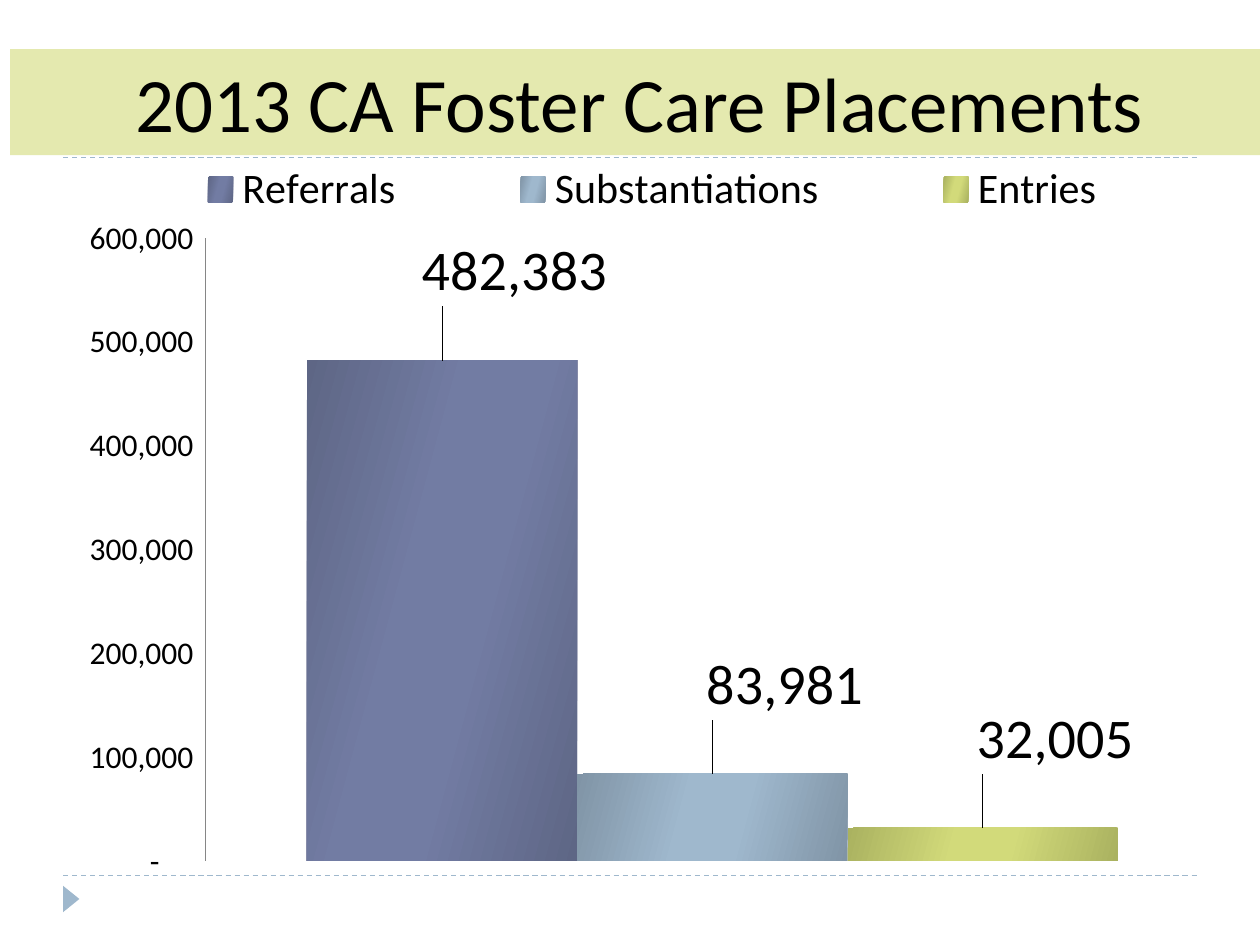
from lxml import etree
from pptx import Presentation
from pptx.chart.data import CategoryChartData
from pptx.dml.color import RGBColor
from pptx.enum.chart import XL_CHART_TYPE, XL_LABEL_POSITION, XL_LEGEND_POSITION, XL_TICK_MARK
from pptx.enum.dml import MSO_LINE
from pptx.enum.shapes import MSO_CONNECTOR, MSO_SHAPE
from pptx.enum.text import MSO_ANCHOR, MSO_AUTO_SIZE, PP_ALIGN
from pptx.oxml import parse_xml
from pptx.oxml.ns import nsdecls, qn
from pptx.util import Inches, Pt

COLUMNS = XL_CHART_TYPE.COLUMN_CLUSTERED
OUTSIDE_END = XL_LABEL_POSITION.OUTSIDE_END
LEGEND_TOP = XL_LEGEND_POSITION.TOP
NO_TICK = XL_TICK_MARK.NONE
DASH = MSO_LINE.DASH
STRAIGHT = MSO_CONNECTOR.STRAIGHT
TRIANGLE = MSO_SHAPE.ISOSCELES_TRIANGLE
MIDDLE = MSO_ANCHOR.MIDDLE
GROW = MSO_AUTO_SIZE.SHAPE_TO_FIT_TEXT
CENTER = PP_ALIGN.CENTER

FONT = "Calibri"
COLORS = {"text": "000000", "band": "E4E9AF", "accent": "9FB8CD", "axis": "868686"}
# name, value, colour in the middle of the bar, colour at its edges
SERIES = [
    ("Referrals", 482383, "727CA3", "5E6685"),
    ("Substantiations", 83981, "9FB8CD", "8094A6"),
    ("Entries", 32005, "D2DA7A", "AAB260"),
]
ACCOUNTING = '_(* #,##0_);_(* \\(#,##0\\);_(* "-"??_);_('
WIDTH, HEIGHT = 10, 7.5
MARGIN = 0.5
LABEL_SHIFT = 0.06


def rgb(name):
    return RGBColor.from_string(COLORS[name])


def set_font(font, size):
    font.name = FONT
    font.size = Pt(size)
    font.color.rgb = rgb("text")


def add_title(slide, text):
    title = slide.shapes.title
    title.left, title.top, title.width, title.height = map(Inches, (0.08, 0.39, WIDTH, 0.84))
    title.fill.solid()
    title.fill.fore_color.rgb = rgb("band")
    frame = title.text_frame
    frame.text = text
    frame.word_wrap = True
    frame.auto_size = GROW
    frame.vertical_anchor = MIDDLE
    para = frame.paragraphs[0]
    para.alignment = CENTER
    set_font(para.font, 44)
    # The band lies in front of the chart
    slide.shapes.element.append(title.element)


def add_rule(slide, y):
    rule = slide.shapes.add_connector(
        STRAIGHT, Inches(MARGIN), Inches(y), Inches(WIDTH - MARGIN), Inches(y))
    rule.line.color.rgb = rgb("accent")
    rule.line.width = Pt(0.75)
    rule.line.dash_style = DASH
    etree.SubElement(rule.element.spPr, qn("a:effectLst"))


def add_marker(slide):
    marker = slide.shapes.add_shape(
        TRIANGLE, Inches(0.46), Inches(7.07), Inches(0.21), Inches(0.13))
    marker.rotation = 90
    marker.shadow.inherit = False
    marker.fill.solid()
    marker.fill.fore_color.rgb = rgb("accent")
    marker.line.fill.background()


def make_layout(**settings):
    items = "".join(f'<c:{key} val="{value}"/>' for key, value in settings.items())
    return parse_xml(
        f'<c:layout {nsdecls("c")}><c:manualLayout>{items}</c:manualLayout></c:layout>')


def place(element, after, **settings):
    """Give a chart part a manual layout, right after the named child."""
    for old in element.findall(qn("c:layout")):
        element.remove(old)
    layout = make_layout(**settings)
    if after is None:
        element.insert(0, layout)
    else:
        element.find(qn(after)).addnext(layout)


def fill_gradient(series, middle, edge):
    stops = "".join(
        f'<a:gs pos="{position}"><a:srgbClr val="{color}"/></a:gs>'
        for position, color in ((0, edge), (40000, middle), (60000, middle), (100000, edge)))
    series.format.fill.solid()
    solid = series.format.fill._xPr.find(qn("a:solidFill"))
    solid.getparent().replace(solid, parse_xml(
        f'<a:gradFill {nsdecls("a")}><a:gsLst>{stops}</a:gsLst>'
        '<a:lin ang="900000" scaled="0"/></a:gradFill>'))


def format_series(series, middle, edge):
    fill_gradient(series, middle, edge)
    labels = series.data_labels
    labels.show_value = True
    labels.number_format = "#,##0"
    labels.number_format_is_linked = False
    set_font(labels.font, 32)
    # Labels sit up and to the right of their bars
    label = series.points[0].data_label
    set_font(label.font, 32)
    label.position = OUTSIDE_END
    place(labels._element.find(qn("c:dLbl")), "c:idx", x=LABEL_SHIFT, y=-LABEL_SHIFT)


def add_chart(slide):
    data = CategoryChartData(number_format="#,##0")
    data.categories = ["1"]
    for name, value, *_ in SERIES:
        data.add_series(name, [value])
    chart = slide.shapes.add_chart(
        COLUMNS, Inches(0.29), Inches(0.67), Inches(9.58), Inches(6.42), data).chart
    set_font(chart.font, 18)
    chart.has_title = False

    # Axes
    chart.category_axis.visible = False
    axis = chart.value_axis
    axis.has_major_gridlines = False
    axis.major_tick_mark = axis.minor_tick_mark = NO_TICK
    axis.minimum_scale, axis.maximum_scale, axis.major_unit = 0, 600000, 100000
    axis.tick_labels.number_format = ACCOUNTING
    axis.tick_labels.number_format_is_linked = False
    set_font(axis.tick_labels.font, 18)
    axis.format.line.color.rgb = rgb("axis")
    axis.format.line.width = Pt(0.75)

    # Legend
    chart.has_legend = True
    legend = chart.legend
    legend.position = LEGEND_TOP
    legend.include_in_layout = False
    set_font(legend.font, 24)
    place(legend._element, "c:legendPos",
          xMode="edge", yMode="edge", x=0.05, y=0.09, w=0.92, h=0.08)

    # Bars
    plot = chart.plots[0]
    plot.gap_width, plot.overlap = 75, 0
    plot.vary_by_categories = False
    place(chart._chartSpace.chart.plotArea, None, layoutTarget="inner",
          xMode="edge", yMode="edge", x=0.14, y=0.19, w=0.84, h=0.77)
    for series, (_, _, middle, edge) in zip(plot.series, SERIES):
        format_series(series, middle, edge)


def main():
    deck = Presentation()
    deck.slide_width, deck.slide_height = Inches(WIDTH), Inches(HEIGHT)
    slide = deck.slides.add_slide(deck.slide_layouts[5])
    for y in (6.95, 1.25):
        add_rule(slide, y)
    add_marker(slide)
    add_chart(slide)
    add_title(slide, "2013 CA Foster Care Placements")
    deck.save("out.pptx")


if __name__ == "__main__":
    main()
